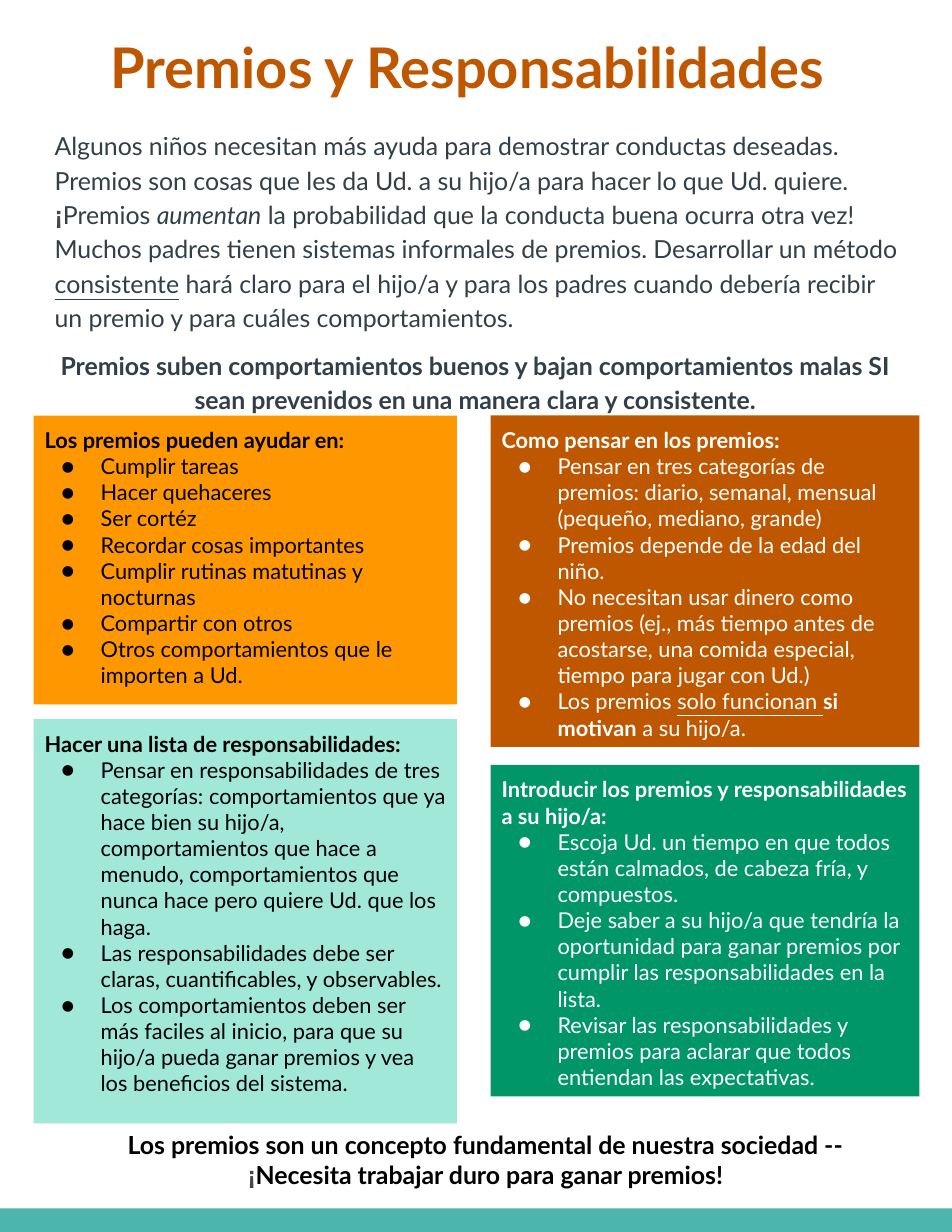
"""Build a one-page Spanish handout about rewards and responsibilities."""
from lxml import etree
from pptx import Presentation
from pptx.dml.color import RGBColor
from pptx.enum.shapes import MSO_SHAPE
from pptx.enum.text import MSO_ANCHOR, MSO_AUTO_SIZE, PP_ALIGN
from pptx.oxml.ns import qn
from pptx.util import Inches, Pt

RECT = MSO_SHAPE.RECTANGLE
TOP = MSO_ANCHOR.TOP
NO_FIT = MSO_AUTO_SIZE.NONE
LEFT, CENTER = PP_ALIGN.LEFT, PP_ALIGN.CENTER
TITLE_ONLY = 5

ORANGE, SLATE, BLACK, WHITE, GRAY = "BF5700", "333F48", "000000", "FFFFFF", "474747"
BOLD = {"bold": True}
ITALIC = {"italic": True}
UNDERLINE = {"underline": True}
EXCLAMATION = {"name": "Arial", "color": GRAY, "bold": True}


def rgb(value):
    return RGBColor.from_string(value)


class Handout:
    font = "Lato"
    margin = Inches(0.1)
    indent = Inches(0.5)
    hanging = Inches(-0.35)

    def __init__(self, slide):
        self.slide = slide

    def prepare(self, shape):
        frame = shape.text_frame
        settings = {"word_wrap": True, "auto_size": NO_FIT, "vertical_anchor": TOP}
        for side in ("left", "top", "right", "bottom"):
            settings[f"margin_{side}"] = self.margin
        for name, value in settings.items():
            setattr(frame, name, value)
        return frame

    def fill_paragraph(self, paragraph, content, size, color, align=LEFT, spacing=1.0, **base):
        paragraph.alignment = align
        paragraph.line_spacing = spacing
        runs = [(content, {})] if isinstance(content, str) else content
        for text, changes in runs:
            run = paragraph.add_run()
            run.text = text
            style = {"name": self.font, "size": Pt(size), "bold": False, **base, **changes}
            run.font.color.rgb = rgb(style.pop("color", color))
            for name, value in style.items():
                setattr(run.font, name, value)

    def bullet(self, paragraph, color):
        properties = paragraph._p.get_or_add_pPr()
        properties.set("marL", str(self.indent))
        properties.set("indent", str(self.hanging))
        tint = etree.SubElement(properties, qn("a:buClr"))
        etree.SubElement(tint, qn("a:srgbClr"), val=color)
        etree.SubElement(properties, qn("a:buFont"), typeface=self.font)
        etree.SubElement(properties, qn("a:buChar"), char="●")

    def title(self, box, text):
        heading = self.slide.shapes.title
        sides = zip(("left", "top", "width", "height"), box)
        for name, value in sides:
            setattr(heading, name, Inches(value))
        frame = self.prepare(heading)
        self.fill_paragraph(frame.paragraphs[0], text, 36, ORANGE, CENTER, bold=True)

    def text(self, box, content, color, **style):
        area = self.slide.shapes.add_textbox(*map(Inches, box))
        self.fill_paragraph(self.prepare(area).paragraphs[0], content, 16, color, **style)

    def block(self, box, fill):
        shape = self.slide.shapes.add_shape(RECT, *map(Inches, box))
        shape.shadow.inherit = False
        shape.fill.solid()
        shape.fill.fore_color.rgb = rgb(fill)
        shape.line.fill.background()
        return shape

    def panel(self, box, fill, color, heading, items):
        frame = self.prepare(self.block(box, fill))
        self.fill_paragraph(frame.paragraphs[0], heading, 14, color, bold=True)
        for item in items:
            paragraph = frame.add_paragraph()
            self.fill_paragraph(paragraph, item, 14, color)
            self.bullet(paragraph, color)


INTRO = [
    ("Algunos niños necesitan más ayuda para demostrar conductas deseadas. Premios son "
     "cosas que les da Ud. a su hijo/a para hacer lo que Ud. quiere. ", {}),
    ("¡", EXCLAMATION),
    ("Premios ", {}),
    ("aumentan", ITALIC),
    (" la probabilidad que la conducta buena ocurra otra vez! Muchos padres tienen "
     "sistemas informales de premios. Desarrollar un método ", {}),
    ("consistente", UNDERLINE),
    (" hará claro para el hijo/a y para los padres cuando debería recibir un premio y "
     "para cuáles comportamientos.", {}),
]
KEY_POINT = ("Premios suben comportamientos buenos y bajan comportamientos malas SI sean "
             "prevenidos en una manera clara y consistente.")
CLOSING = [
    ("Los premios son un concepto fundamental de nuestra sociedad -- ", {}),
    ("¡", EXCLAMATION),
    ("Necesita trabajar duro para ganar premios!", {}),
]
LEFT_COLUMN, RIGHT_COLUMN = (0.3, 3.78), (4.38, 3.83)
PANELS = [
    (RIGHT_COLUMN, 6.83, 2.96, "009668", WHITE,
     "Introducir los premios y responsabilidades a su hijo/a:",
     ["Escoja Ud. un tiempo en que todos están calmados, de cabeza fría, y compuestos.",
      "Deje saber a su hijo/a que tendría la oportunidad para ganar premios por cumplir "
      "las responsabilidades en la lista.",
      "Revisar las responsabilidades y premios para aclarar que todos entiendan las "
      "expectativas."]),
    (LEFT_COLUMN, 3.71, 2.58, "FF9800", BLACK,
     "Los premios pueden ayudar en:",
     ["Cumplir tareas", "Hacer quehaceres", "Ser cortéz", "Recordar cosas importantes",
      "Cumplir rutinas matutinas y nocturnas", "Compartir con otros",
      "Otros comportamientos que le importen a Ud."]),
    (RIGHT_COLUMN, 3.71, 2.96, ORANGE, WHITE,
     "Como pensar en los premios:",
     ["Pensar en tres categorías de premios: diario, semanal, mensual (pequeño, mediano, "
      "grande)",
      "Premios depende de la edad del niño.",
      "No necesitan usar dinero como premios (ej., más tiempo antes de acostarse, una "
      "comida especial, tiempo para jugar con Ud.)",
      [("Los premios ", {}), ("solo funcionan ", UNDERLINE), ("si motivan", BOLD),
       (" a su hijo/a.", {})]]),
    (LEFT_COLUMN, 6.42, 3.61, "A1E8D9", BLACK,
     "Hacer una lista de responsabilidades:",
     ["Pensar en responsabilidades de tres categorías: comportamientos que ya hace bien su "
      "hijo/a, comportamientos que hace a menudo, comportamientos que nunca hace pero "
      "quiere Ud. que los haga.",
      "Las responsabilidades debe ser claras, cuantificables, y observables.",
      "Los comportamientos deben ser más faciles al inicio, para que su hijo/a pueda ganar "
      "premios y vea los beneficios del sistema."]),
]


def main():
    deck = Presentation()
    deck.slide_width, deck.slide_height = Inches(8.5), Inches(11)
    handout = Handout(deck.slides.add_slide(deck.slide_layouts[TITLE_ONLY]))
    handout.block((0, 10.79, 8.5, 0.21), "4DB6AC")
    handout.title((0.47, 0.19, 7.41, 0.82), "Premios y Responsabilidades")
    handout.text((0.39, 1.03, 7.74, 1.86), INTRO, SLATE, spacing=1.15)
    for (left, width), top, height, fill, color, heading, items in PANELS:
        handout.panel((left, top, width, height), fill, color, heading, items)
    handout.text((0.6, 9.99, 7.47, 0.82), CLOSING, BLACK, align=CENTER, bold=True)
    handout.text((0.33, 2.99, 7.83, 0.82), KEY_POINT, SLATE, align=CENTER, spacing=1.15,
                 bold=True)
    deck.save("out.pptx")


if __name__ == "__main__":
    main()
